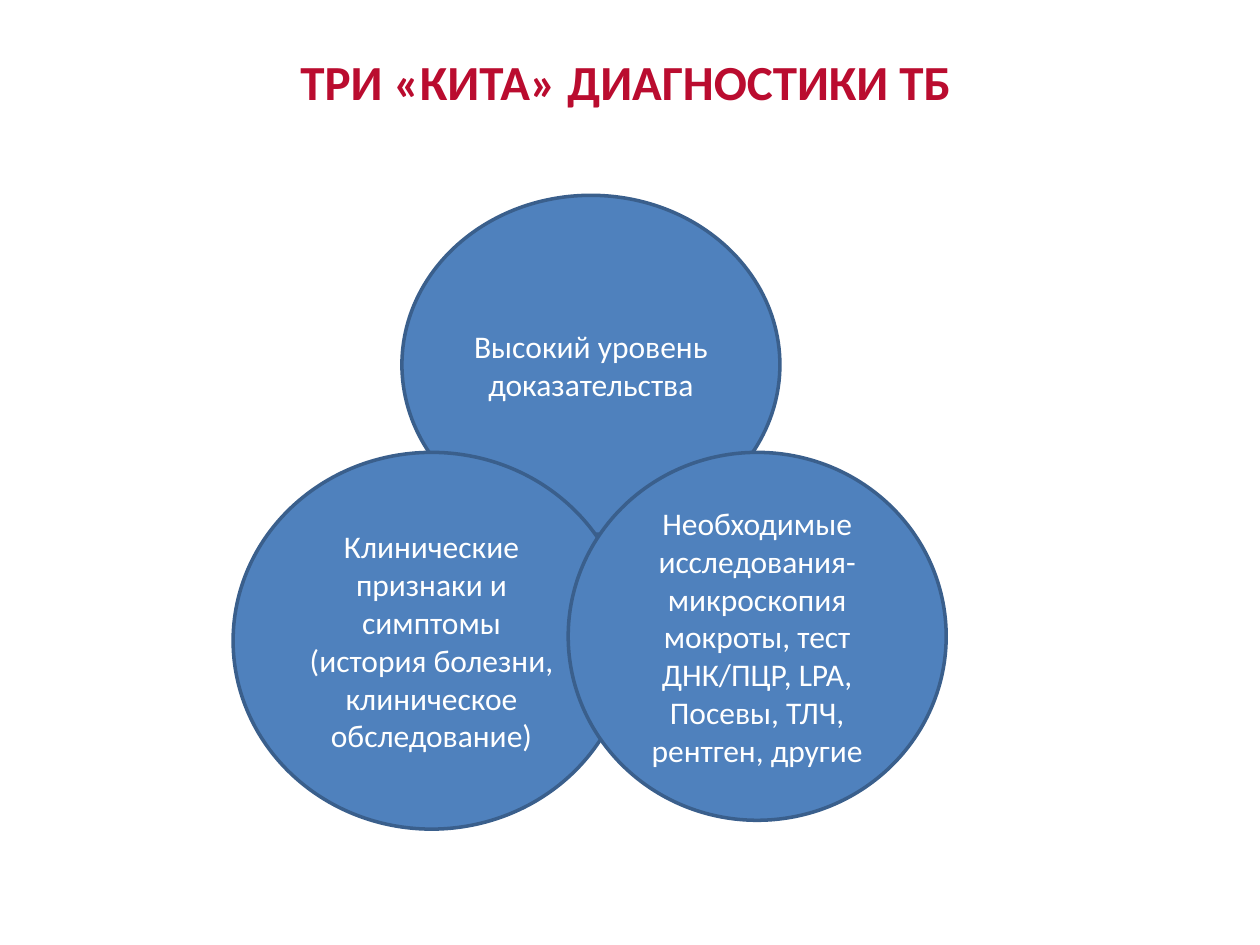
from pptx import Presentation
from pptx.dml.color import RGBColor
from pptx.enum.shapes import MSO_SHAPE as Shape
from pptx.enum.text import MSO_ANCHOR as Anchor, PP_ALIGN as Align
from pptx.util import Inches, Pt

RED = RGBColor(0xBA, 0x0C, 0x2F)
BLUE = RGBColor(0x4F, 0x81, 0xBD)
NAVY = RGBColor(0x3A, 0x5F, 0x8C)
WHITE = RGBColor(0xFF, 0xFF, 0xFF)


def put(frame, text, size=18, color=WHITE, bold=False):
    frame.word_wrap = True
    frame.vertical_anchor = Anchor.MIDDLE
    par = frame.paragraphs[0]
    par.alignment = Align.CENTER
    run = par.add_run()
    run.text = text
    font = run.font
    font.name = "Calibri"
    font.size = Pt(size)
    font.bold = bold
    font.color.rgb = color


class Deck:
    fill = BLUE
    edge = NAVY
    width = Pt(2)

    def __init__(self, slide):
        self.slide = slide

    def title(self, text, *box):
        head = self.slide.shapes.title
        head.left, head.top, head.width, head.height = map(Inches, box)
        put(head.text_frame, text, size=28, color=RED, bold=True)

    def oval(self, text, *box):
        oval = self.slide.shapes.add_shape(Shape.OVAL, *map(Inches, box))
        oval.shadow.inherit = False
        oval.fill.solid()
        oval.fill.fore_color.rgb = self.fill
        oval.line.color.rgb = self.edge
        oval.line.width = self.width
        put(oval.text_frame, text)


def main():
    prs = Presentation()
    prs.slide_width, prs.slide_height = Inches(10), Inches(7.5)
    deck = Deck(prs.slides.add_slide(prs.slide_layouts[5]))
    deck.title("ТРИ «КИТА» ДИАГНОСТИКИ ТБ", 0.12, 0.3, 9.69, 0.69)
    deck.oval("Высокий уровень доказательства", 3.19, 1.55, 3, 2.69)
    deck.oval("Клинические признаки и симптомы (история болезни, "
              "клиническое обследование)", 1.85, 3.59, 3.15, 2.99)
    deck.oval("Необходимые исследования-микроскопия мокроты, тест "
              "ДНК/ПЦР, LPA, Посевы, ТЛЧ, рентген, другие",
              4.51, 3.59, 3, 2.92)
    prs.save("out.pptx")


if __name__ == "__main__":
    main()
